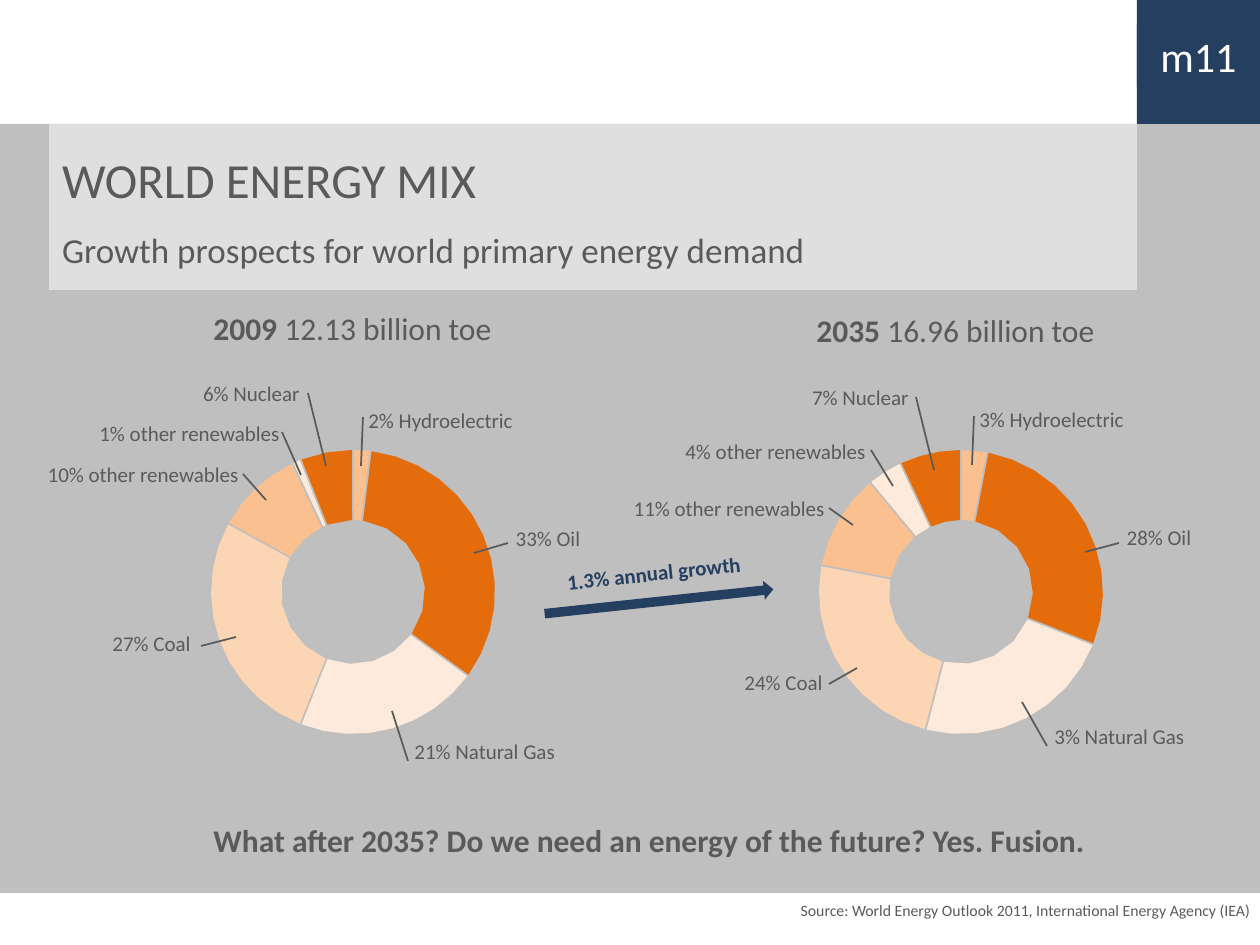
from dataclasses import dataclass
from math import ceil, cos, pi, sin

from lxml.etree import SubElement
from pptx import Presentation
from pptx.dml.color import RGBColor
from pptx.enum.shapes import MSO_CONNECTOR, MSO_SHAPE
from pptx.enum.text import MSO_ANCHOR, MSO_AUTO_SIZE, PP_ALIGN
from pptx.oxml.ns import qn
from pptx.util import Pt

SCALE = 914400 / 126
FONT = "Calibri"
WHITE = RGBColor(0xFF, 0xFF, 0xFF)
GREY = RGBColor(0xBF, 0xBF, 0xBF)
INK = RGBColor(0x59, 0x5A, 0x5A)
NAVY = RGBColor(0x25, 0x3F, 0x61)
ORANGE = RGBColor(0xE4, 0x6C, 0x0A)
AMBER = RGBColor(0xFA, 0xC0, 0x90)
PEACH = RGBColor(0xFC, 0xD5, 0xB5)
CREAM = RGBColor(0xFD, 0xEA, 0xDA)
LEFT, MID, RIGHT = PP_ALIGN.LEFT, PP_ALIGN.CENTER, PP_ALIGN.RIGHT

OUTER, INNER, GAP = 142, 72, 2
CHORD = 26
RING_Y = 592
LABEL_H = 34
TILT = -6.1


@dataclass
class Fuel:
    name: str
    color: RGBColor
    width: int
    align: PP_ALIGN


@dataclass
class Slice:
    """A share of the ring, the number on its label, and the label's place."""
    fuel: Fuel
    share: int
    shown: int
    left: int
    top: int
    leader: tuple[int, int, int, int]


@dataclass
class Ring:
    year: str
    total: str
    head: tuple[int, int]
    center: int
    slices: list[Slice]


HYDRO = Fuel("Hydroelectric", AMBER, 174, LEFT)
OIL = Fuel("Oil", ORANGE, 102, MID)
GAS = Fuel("Natural Gas", CREAM, 180, LEFT)
COAL = Fuel("Coal", PEACH, 121, RIGHT)
BIO = Fuel("other renewables", AMBER, 234, RIGHT)
RENEW = Fuel("other renewables", CREAM, 234, RIGHT)
NUCLEAR = Fuel("Nuclear", ORANGE, 135, RIGHT)

RINGS = [
    Ring("2009", "12.13 billion toe", (201, 303), 353, [
        Slice(HYDRO, 2, 2, 356, 406, (363, 417, 361, 466)),
        Slice(OIL, 33, 33, 497, 524, (474, 553, 508, 543)),
        Slice(GAS, 21, 21, 402, 737, (392, 711, 408, 761)),
        Slice(COAL, 27, 27, 82, 629, (201, 646, 236, 637)),
        Slice(BIO, 10, 10, 17, 460, (243, 474, 266, 500)),
        Slice(RENEW, 1, 1, 58, 419, (282, 432, 301, 475)),
        Slice(NUCLEAR, 6, 6, 177, 379, (308, 393, 326, 466)),
    ]),
    Ring("2035", "16.96 billion toe", (804, 305), 961, [
        Slice(HYDRO, 3, 3, 967, 405, (974, 416, 972, 465)),
        Slice(OIL, 28, 28, 1108, 523, (1085, 552, 1119, 543)),
        Slice(GAS, 23, 3, 1042, 722, (1022, 702, 1047, 746)),
        Slice(COAL, 24, 24, 714, 668, (829, 684, 857, 668)),
        Slice(BIO, 11, 11, 603, 494, (829, 508, 853, 525)),
        Slice(RENEW, 4, 4, 644, 437, (871, 450, 893, 486)),
        Slice(NUCLEAR, 7, 7, 786, 383, (916, 397, 934, 470)),
    ]),
]


def px(*values: float) -> list[int]:
    return [round(v * SCALE) for v in values]


def paint(shape, color: RGBColor) -> None:
    shape.shadow.inherit = False
    shape.fill.solid()
    shape.fill.fore_color.rgb = color
    shape.line.fill.background()


def block(shapes, kind: MSO_SHAPE, box: tuple, color: RGBColor):
    shape = shapes.add_shape(kind, *px(*box))
    paint(shape, color)
    return shape


def style(para, size: int, color: RGBColor = INK, align: PP_ALIGN = LEFT) -> None:
    para.alignment = align
    para.font.name = FONT
    para.font.size = Pt(size)
    para.font.color.rgb = color


def write(shapes, text: str, box: tuple, size: int, color: RGBColor = INK,
          align: PP_ALIGN = LEFT, bold: bool = False, wrap: bool = True):
    shape = shapes.add_textbox(*px(*box))
    shape.text_frame.word_wrap = wrap
    para = shape.text_frame.paragraphs[0]
    para.text = text
    style(para, size, color, align)
    para.font.bold = bold
    return shape


def label(shapes, text: str, box: tuple, color: RGBColor = INK,
          align: PP_ALIGN = LEFT, bold: bool = False):
    shape = write(shapes, text, box, 12, color, align, bold)
    shape.text_frame.paragraphs[0].line_spacing = Pt(12)
    return shape


def arc(center: int, radius: int, start: float, end: float) -> list[tuple]:
    """Points clockwise from twelve o'clock, half a gap in from both ends."""
    trim = GAP / 2 / radius
    start, end = start + trim, end - trim
    steps = ceil((end - start) * radius / CHORD)
    turns = [start + (end - start) * i / steps for i in range(steps + 1)]
    return [tuple(px(center + radius * sin(t), RING_Y - radius * cos(t)))
            for t in turns]


def draw_ring(shapes, ring: Ring) -> None:
    start = 0.0
    for part in ring.slices:
        end = start + 2 * pi * part.share / 100
        points = arc(ring.center, OUTER, start, end)
        points += reversed(arc(ring.center, INNER, start, end))
        pen = shapes.build_freeform(*points[0])
        pen.add_line_segments(points[1:])
        paint(pen.convert_to_shape(), part.fuel.color)
        start = end


def draw_notes(shapes, ring: Ring) -> None:
    head = write(shapes, "", (*ring.head, 306, 50), 18, wrap=False)
    para = head.text_frame.paragraphs[0]
    year = para.add_run()
    year.text, year.font.bold = ring.year, True
    para.add_run().text = f" {ring.total}"
    for part in ring.slices:
        fuel = part.fuel
        label(shapes, f"{part.shown}% {fuel.name}",
              (part.left, part.top, fuel.width, LABEL_H), align=fuel.align)
        line = shapes.add_connector(MSO_CONNECTOR.STRAIGHT, *px(*part.leader))
        line.line.color.rgb = INK
        line.line.width = Pt(1)
        SubElement(line._element.spPr, qn("a:effectLst"))


def draw_title(shapes) -> None:
    panel = block(shapes, MSO_SHAPE.RECTANGLE, (49, 124, 1088, 166), WHITE)
    tint = panel.fill._xPr.find(qn("a:solidFill"))[0]
    SubElement(tint, qn("a:alpha")).set("val", "50000")
    title = shapes.title
    shapes._spTree.append(title._element)
    title.left, title.top, title.width, title.height = px(62, 149, 1024, 123)
    frame = title.text_frame
    frame.text = "WORLD ENERGY MIX\nGrowth prospects for world primary energy demand"
    frame.auto_size = MSO_AUTO_SIZE.NONE
    frame.vertical_anchor = MSO_ANCHOR.TOP
    frame.margin_left = frame.margin_right = 0
    frame.margin_top = frame.margin_bottom = 0
    for para, size in zip(frame.paragraphs, (28, 20)):
        style(para, size)
        para.space_after = Pt(12)


def main() -> None:
    deck = Presentation()
    deck.slide_width, deck.slide_height = px(1260, 945)
    shapes = deck.slides.add_slide(deck.slide_layouts[5]).shapes
    block(shapes, MSO_SHAPE.RECTANGLE, (0, 124, 1260, 769), GREY)
    block(shapes, MSO_SHAPE.RECTANGLE, (1137, 0, 123, 124), NAVY)
    badge = write(shapes, "m11", (1137, 24, 123, 63), 24, WHITE, MID)
    paint(badge, NAVY)
    draw_title(shapes)
    write(shapes, "Source: World Energy Outlook 2011, International Energy Agency (IEA)",
          (298, 895, 964, 32), 9, align=RIGHT)
    for ring in RINGS:
        draw_ring(shapes, ring)
        draw_notes(shapes, ring)
    write(shapes, "What after 2035? Do we need an energy of the future? Yes. Fusion.",
          (201, 815, 902, 50), 18, bold=True, wrap=False)
    arrow = block(shapes, MSO_SHAPE.RIGHT_ARROW, (544, 592, 230, 19), NAVY)
    growth = label(shapes, "1.3% annual growth", (548, 558, 212, LABEL_H), NAVY, MID, True)
    arrow.rotation = growth.rotation = TILT
    deck.save("out.pptx")


if __name__ == "__main__":
    main()
